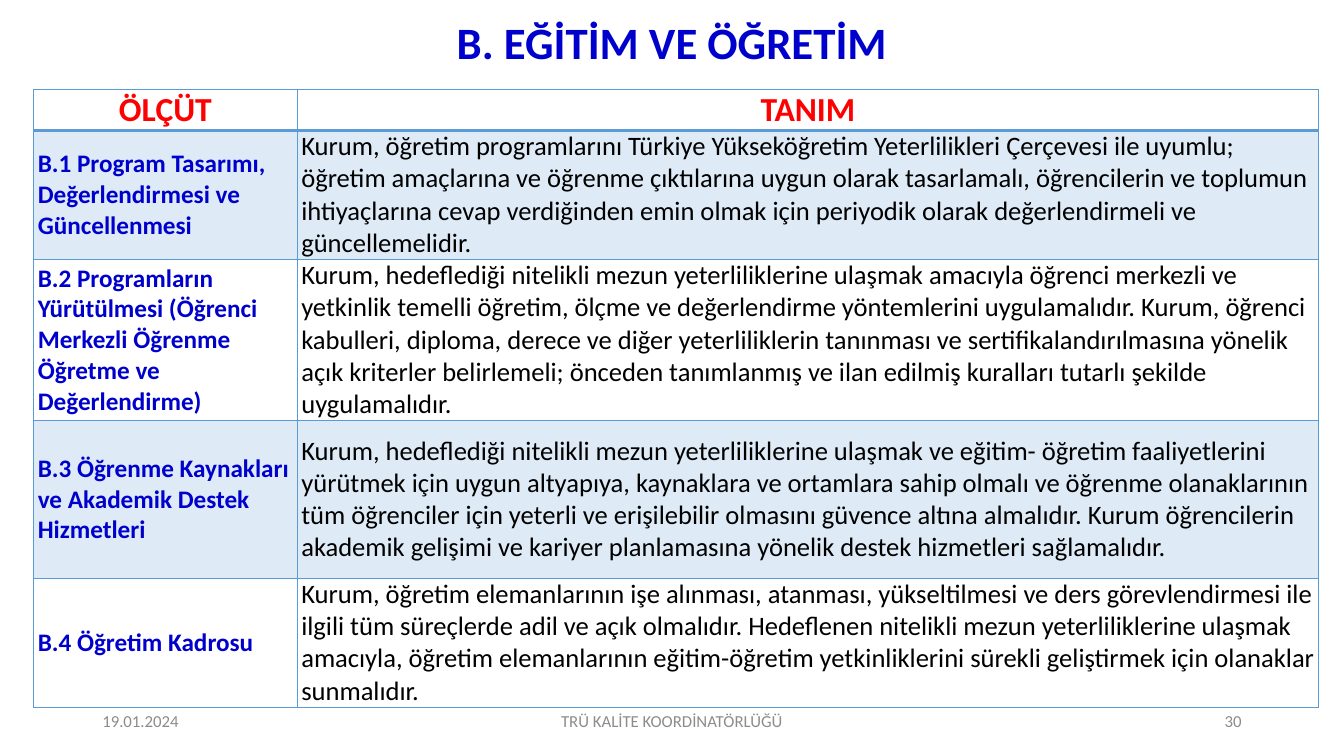
from dataclasses import dataclass
from typing import NamedTuple

from lxml import etree
from pptx import Presentation
from pptx import util as u
from pptx.dml import color
from pptx.enum import text
from pptx.oxml import ns

PX = 9525


@dataclass(frozen=True)
class Theme:
    font: str = "Calibri"
    white: str = "FFFFFF"
    black: str = "000000"
    blue: str = "0000CC"
    red: str = "FF0000"
    grey: str = "8C8C8C"
    rule: str = "5B9BD5"
    band: str = "DEEBF7"
    title_size: int = 32
    header_size: int = 24
    criterion_size: int = 18
    definition_size: int = 19
    footer_size: int = 12


THEME = Theme()


class Style(NamedTuple):
    size: int
    ink: str
    bold: bool = False
    align: text.PP_ALIGN = text.PP_ALIGN.LEFT


class Criterion(NamedTuple):
    name: str
    definition: str
    height: int


class Footer(NamedTuple):
    words: str
    left: int
    width: int
    align: text.PP_ALIGN


TITLE = Style(THEME.title_size, THEME.blue, True, text.PP_ALIGN.CENTER)
HEADER = Style(THEME.header_size, THEME.red, True, text.PP_ALIGN.CENTER)
NAME = Style(THEME.criterion_size, THEME.blue, True)
DEFINITION = Style(THEME.definition_size, THEME.black)

COLUMNS = (251, 973)
HEADER_HEIGHT = 39
CRITERIA = (
    Criterion(
        "B.1 Program Tasarımı, Değerlendirmesi ve Güncellenmesi",
        "Kurum, öğretim programlarını Türkiye Yükseköğretim Yeterlilikleri Çerçevesi ile uyumlu; "
        "öğretim amaçlarına ve öğrenme çıktılarına uygun olarak tasarlamalı, öğrencilerin ve toplumun "
        "ihtiyaçlarına cevap verdiğinden emin olmak için periyodik olarak değerlendirmeli ve "
        "güncellemelidir.",
        119,
    ),
    Criterion(
        "B.2 Programların Yürütülmesi (Öğrenci Merkezli Öğrenme Öğretme ve Değerlendirme)",
        "Kurum, hedeflediği nitelikli mezun yeterliliklerine ulaşmak amacıyla öğrenci merkezli ve "
        "yetkinlik temelli öğretim, ölçme ve değerlendirme yöntemlerini uygulamalıdır. Kurum, öğrenci "
        "kabulleri, diploma, derece ve diğer yeterliliklerin tanınması ve sertifikalandırılmasına yönelik "
        "açık kriterler belirlemeli; önceden tanımlanmış ve ilan edilmiş kuralları tutarlı şekilde "
        "uygulamalıdır.",
        150,
    ),
    Criterion(
        "B.3 Öğrenme Kaynakları ve Akademik Destek Hizmetleri",
        "Kurum, hedeflediği nitelikli mezun yeterliliklerine ulaşmak ve eğitim- öğretim faaliyetlerini "
        "yürütmek için uygun altyapıya, kaynaklara ve ortamlara sahip olmalı ve öğrenme olanaklarının "
        "tüm öğrenciler için yeterli ve erişilebilir olmasını güvence altına almalıdır. Kurum öğrencilerin "
        "akademik gelişimi ve kariyer planlamasına yönelik destek hizmetleri sağlamalıdır.",
        150,
    ),
    Criterion(
        "B.4 Öğretim Kadrosu",
        "Kurum, öğretim elemanlarının işe alınması, atanması, yükseltilmesi ve ders görevlendirmesi ile "
        "ilgili tüm süreçlerde adil ve açık olmalıdır. Hedeflenen nitelikli mezun yeterliliklerine ulaşmak "
        "amacıyla, öğretim elemanlarının eğitim-öğretim yetkinliklerini sürekli geliştirmek için olanaklar "
        "sunmalıdır.",
        119,
    ),
)

FOOTERS = (
    Footer("19.01.2024", 88, 288, text.PP_ALIGN.LEFT),
    Footer("TRÜ KALİTE KOORDİNATÖRLÜĞÜ", 424, 432, text.PP_ALIGN.CENTER),
    Footer("30", 904, 288, text.PP_ALIGN.RIGHT),
)


def px(count: int) -> u.Emu:
    return u.Emu(count * PX)


def apply(target, values: dict) -> None:
    for key, value in values.items():
        setattr(target, key, value)


def write(frame, words: str, style: Style) -> None:
    para = frame.paragraphs[0]
    para.alignment = style.align
    span = para.add_run()
    span.text = words
    apply(span.font, {"name": THEME.font, "size": u.Pt(style.size), "bold": style.bold})
    span.font.color.rgb = color.RGBColor.from_string(style.ink)


def draw_borders(cell, top: int, bottom: int) -> None:
    properties = cell._tc.get_or_add_tcPr()
    widths = {"lnL": 1, "lnR": 1, "lnT": top, "lnB": bottom}
    for index, (side, points) in enumerate(widths.items()):
        line = etree.Element(ns.qn(f"a:{side}"), w=str(u.Pt(points)))
        fill = etree.SubElement(line, ns.qn("a:solidFill"))
        etree.SubElement(fill, ns.qn("a:srgbClr"), val=THEME.rule)
        properties.insert(index, line)


def fill_cell(cell, words: str, style: Style, row: int) -> None:
    apply(cell, {
        "margin_left": px(4), "margin_right": px(4), "margin_top": 0, "margin_bottom": 0,
        "vertical_anchor": text.MSO_ANCHOR.MIDDLE,
    })
    cell.fill.solid()
    cell.fill.fore_color.rgb = color.RGBColor.from_string(THEME.band if row % 2 else THEME.white)
    write(cell.text_frame, words, style)
    draw_borders(cell, top=2 if row == 1 else 1, bottom=2 if row == 0 else 1)


def draw_title(page) -> None:
    title = page.shapes.title
    apply(title, {"left": px(88), "top": px(14), "width": px(1104), "height": px(58)})
    apply(title.text_frame, {
        "word_wrap": True, "auto_size": text.MSO_AUTO_SIZE.NONE,
        "vertical_anchor": text.MSO_ANCHOR.MIDDLE,
    })
    write(title.text_frame, "B. EĞİTİM VE ÖĞRETİM", TITLE)
    title.text_frame.paragraphs[0].line_spacing = 0.9


def draw_table(page) -> None:
    heights = [HEADER_HEIGHT] + [criterion.height for criterion in CRITERIA]
    table = page.shapes.add_table(
        len(heights), len(COLUMNS), px(32), px(85), px(sum(COLUMNS)), px(sum(heights))
    ).table
    apply(table, {"first_row": False, "horz_banding": False})
    for column, width in zip(table.columns, COLUMNS):
        column.width = px(width)
    for row, height in zip(table.rows, heights):
        row.height = px(height)
    for column, words in enumerate(("ÖLÇÜT", "TANIM")):
        fill_cell(table.cell(0, column), words, HEADER, 0)
    for row, criterion in enumerate(CRITERIA, start=1):
        fill_cell(table.cell(row, 0), criterion.name, NAME, row)
        fill_cell(table.cell(row, 1), criterion.definition, DEFINITION, row)


def draw_footer(page, footer: Footer) -> None:
    box = page.shapes.add_textbox(px(footer.left), px(667), px(footer.width), px(38))
    apply(box.text_frame, {"word_wrap": True, "vertical_anchor": text.MSO_ANCHOR.MIDDLE})
    write(box.text_frame, footer.words, Style(THEME.footer_size, THEME.grey, align=footer.align))


def main() -> None:
    deck = Presentation()
    apply(deck, {"slide_width": px(1280), "slide_height": px(720)})
    page = deck.slides.add_slide(deck.slide_layouts.get_by_name("Title Only"))
    draw_title(page)
    draw_table(page)
    for footer in FOOTERS:
        draw_footer(page, footer)
    deck.save("out.pptx")


if __name__ == "__main__":
    main()
